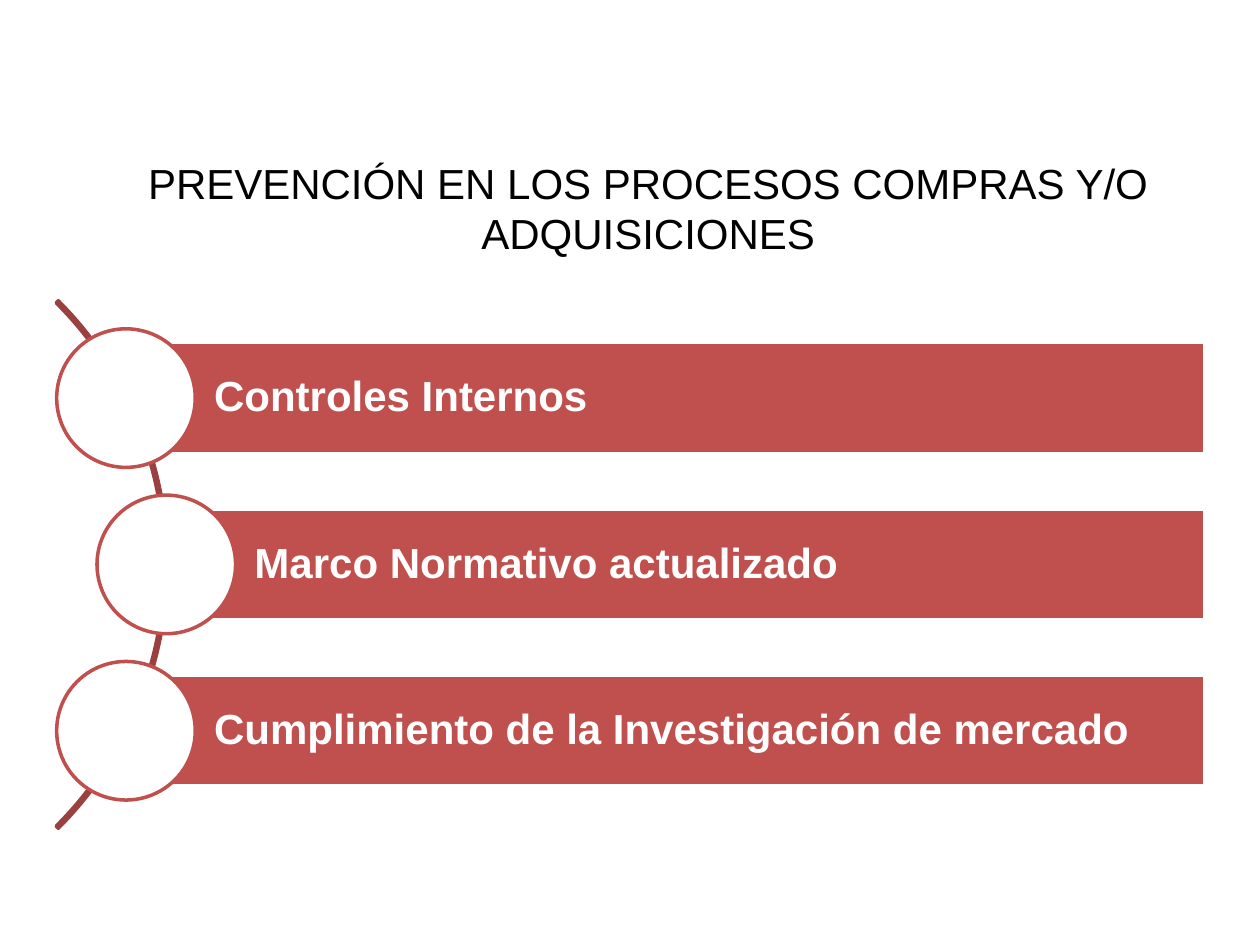
from pptx import Presentation
from pptx.dml.color import RGBColor
from pptx.enum.shapes import MSO_SHAPE
from pptx.enum.text import MSO_ANCHOR, MSO_AUTO_SIZE, PP_ALIGN
from pptx.util import Inches, Pt

ARC, BAR, CIRCLE = MSO_SHAPE.BLOCK_ARC, MSO_SHAPE.RECTANGLE, MSO_SHAPE.OVAL
TOP, MIDDLE = MSO_ANCHOR.TOP, MSO_ANCHOR.MIDDLE
LEFT, CENTER = PP_ALIGN.LEFT, PP_ALIGN.CENTER
NO_AUTOFIT = MSO_AUTO_SIZE.NONE
TITLE_ONLY = 5

RED, DARK_RED, WHITE, BLACK = "C0504D", "9A403E", "FFFFFF", "000000"

TITLE = "PREVENCIÓN EN LOS PROCESOS COMPRAS Y/O ADQUISICIONES"
# Each measure with the horizontal centre of its circle
MEASURES = [
    ("Controles Internos", 1.0),
    ("Marco Normativo actualizado", 1.32),
    ("Cumplimiento de la Investigación de mercado", 1.0),
]
FIRST_MIDDLE, ROW_PITCH = 3.16, 1.32
BAR_RIGHT, BAR_HEIGHT, CIRCLE_SIZE = 9.56, 0.88, 1.1


def color(value):
    return RGBColor.from_string(value)


def set_all(target, values):
    for name, value in values.items():
        setattr(target, name, value)


def add_outlined(page, kind, left, top, width, height, line, fill=None):
    shape = page.shapes.add_shape(
        kind, Inches(left), Inches(top), Inches(width), Inches(height))
    shape.shadow.inherit = False
    if fill:
        shape.fill.solid()
        shape.fill.fore_color.rgb = color(fill)
    else:
        shape.fill.background()
    shape.line.color.rgb = color(line)
    shape.line.width = Pt(2)
    return shape


def write(shape, text, text_color, frame_format, para_format, bold):
    frame = shape.text_frame
    set_all(frame, {"word_wrap": True, "auto_size": NO_AUTOFIT, **frame_format})
    para = frame.paragraphs[0]
    set_all(para, para_format)
    span = para.add_run()
    span.text = text
    set_all(span.font, {"name": "Arial", "size": Pt(24), "bold": bold})
    span.font.color.rgb = color(text_color)


def add_title(page):
    title = page.shapes.title
    set_all(title, {"left": Inches(0.81), "top": Inches(1.2),
                    "width": Inches(8.67), "height": Inches(3.43)})
    write(title, TITLE, BLACK, {"vertical_anchor": TOP},
          {"alignment": CENTER}, False)


def add_arc(page):
    arc = add_outlined(page, ARC, -4.59, 1.52, 5.92, 5.92, DARK_RED)
    for index, value in enumerate((189, 27, 0.004)):
        arc.adjustments[index] = value


def add_measure(page, text, center, middle):
    bar = add_outlined(page, BAR, center, middle - BAR_HEIGHT / 2,
                       BAR_RIGHT - center, BAR_HEIGHT, WHITE, RED)
    margin = Inches(0.07)
    write(bar, text, WHITE,
          {"vertical_anchor": MIDDLE, "margin_left": Inches(0.7),
           "margin_top": margin, "margin_right": margin,
           "margin_bottom": margin},
          {"alignment": LEFT, "line_spacing": 0.9}, True)
    radius = CIRCLE_SIZE / 2
    add_outlined(page, CIRCLE, center - radius, middle - radius,
                 CIRCLE_SIZE, CIRCLE_SIZE, RED, WHITE)


def main():
    deck = Presentation()
    set_all(deck, {"slide_width": Inches(10), "slide_height": Inches(7.5)})
    page = deck.slides.add_slide(deck.slide_layouts[TITLE_ONLY])
    add_title(page)
    # Arc behind the rows, then one bar and circle per measure
    add_arc(page)
    for row, (text, center) in enumerate(MEASURES):
        add_measure(page, text, center, FIRST_MIDDLE + row * ROW_PITCH)
    deck.save("out.pptx")


if __name__ == "__main__":
    main()
